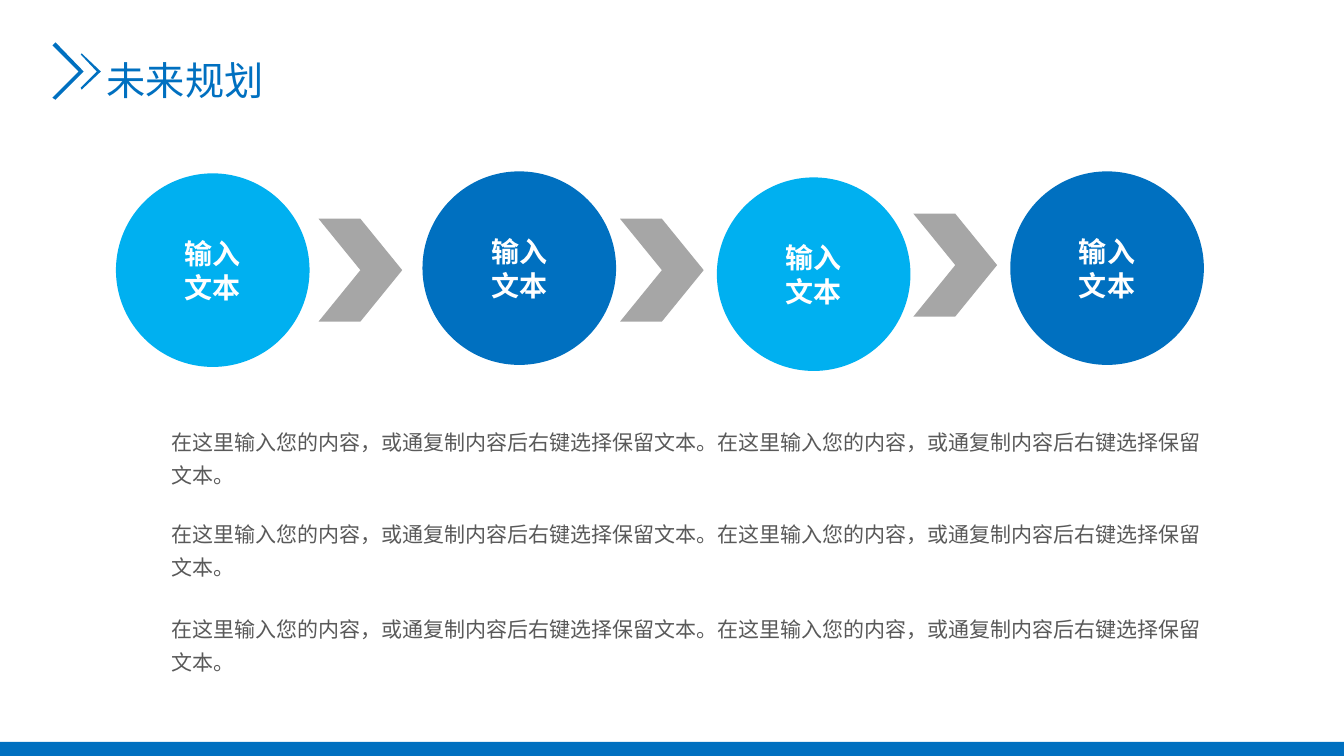
import pptx
import pptx.util
import pptx.dml.color
import pptx.enum.shapes
import pptx.enum.text
import pptx.oxml
import pptx.oxml.ns

Inches = pptx.util.Inches
MSO_SHAPE = pptx.enum.shapes.MSO_SHAPE
PP_ALIGN = pptx.enum.text.PP_ALIGN
MSO_ANCHOR = pptx.enum.text.MSO_ANCHOR
MSO_AUTO_SIZE = pptx.enum.text.MSO_AUTO_SIZE

FONT = "Noto Sans CJK SC"
BLUE, SKY, GREY, TEXT_GREY, WHITE = "0070C0", "00B0F0", "A6A6A6", "595959", "FFFFFF"
DIAMETER = 1.92
STEPS = [(1.15, 1.72, SKY), (4.19, 1.7, BLUE), (7.11, 1.76, SKY), (10.02, 1.7, BLUE)]
ARROWS = [(3.16, 2.17), (6.15, 2.17), (9.06, 2.12)]
BODY_TOPS = [4.14, 5.05, 5.99]
BODY = "在这里输入您的内容，或通复制内容后右键选择保留文本。" * 2
THIN_MARK = [(0.81, 0.53), (1, 0.71), (0.81, 0.89), (0.8, 0.87), (0.96, 0.71), (0.8, 0.54)]
THICK_MARK = [(0.55, 0.42), (0.83, 0.71), (0.55, 0.99), (0.52, 0.97), (0.78, 0.71), (0.52, 0.45)]


def rgb(value):
    return pptx.dml.color.RGBColor.from_string(value)


def place(sp, x, y, w, h):
    sp.left, sp.top, sp.width, sp.height = map(Inches, (x, y, w, h))


def paint(sp, color):
    sp.fill.solid()
    sp.fill.fore_color.rgb = rgb(color)
    sp.line.fill.background()
    sp.shadow.inherit = False


def write(tf, text, size=15, color=TEXT_GREY, bold=False, align=PP_ALIGN.LEFT,
          spacing=1.0, anchor=MSO_ANCHOR.TOP, wrap=True, grow=False):
    tf.word_wrap = wrap
    tf.vertical_anchor = anchor
    tf.auto_size = MSO_AUTO_SIZE.SHAPE_TO_FIT_TEXT if grow else MSO_AUTO_SIZE.NONE
    for i, line in enumerate(text.split("\n")):
        p = tf.add_paragraph() if i else tf.paragraphs[0]
        p.alignment = align
        p.line_spacing = spacing
        r = p.add_run()
        r.text = line
        r.font.name = FONT
        r.font.size = pptx.util.Pt(size)
        r.font.bold = bold
        r.font.color.rgb = rgb(color)
        # East Asian characters take their own typeface element
        ea = pptx.oxml.parse_xml(
            f'<a:ea {pptx.oxml.ns.nsdecls("a")} typeface="{FONT}"/>')
        r.font._element.append(ea)


def add_shape(s, kind, x, y, w, h, color):
    sp = s.shapes.add_shape(kind, *map(Inches, (x, y, w, h)))
    paint(sp, color)
    return sp


def add_outline(s, contours, color):
    first, *others = [[(Inches(x), Inches(y)) for x, y in c] for c in contours]
    builder = s.shapes.build_freeform(*first[0])
    builder.add_line_segments(first[1:], close=True)
    for points in others:
        builder.move_to(*points[0])
        builder.add_line_segments(points[1:], close=True)
    paint(builder.convert_to_shape(), color)


def add_step(s, x, y, color):
    sp = add_shape(s, MSO_SHAPE.OVAL, x, y, DIAMETER, DIAMETER, color)
    write(sp.text_frame, "输入\n文本", size=20, color=WHITE, bold=True,
          align=PP_ALIGN.CENTER, anchor=MSO_ANCHOR.MIDDLE)


def add_body(s, y):
    sp = s.shapes.add_textbox(*map(Inches, (1.6, y, 10.5, 0.76)))
    write(sp.text_frame, BODY, spacing=1.3, grow=True)


def main():
    prs = pptx.Presentation()
    prs.slide_width, prs.slide_height = Inches(13.33), Inches(7.5)
    s = prs.slides.add_slide(prs.slide_layouts[5])

    # Title with its double arrow mark, and the bottom band
    add_outline(s, [THIN_MARK, THICK_MARK], BLUE)
    add_shape(s, MSO_SHAPE.RECTANGLE, 0, 7.36, 13.33, 0.14, BLUE)
    title = s.shapes.title
    place(title, 0.96, 0.28, 1.77, 0.72)
    write(title.text_frame, "未来规划", size=28, color=BLUE, spacing=1.5,
          wrap=False, grow=True)

    # Process row
    for x, y in ARROWS:
        add_shape(s, MSO_SHAPE.CHEVRON, x, y, 0.83, 1.02, GREY)
    for x, y, color in STEPS:
        add_step(s, x, y, color)

    # Explanations
    for y in BODY_TOPS:
        add_body(s, y)

    prs.save("out.pptx")


if __name__ == "__main__":
    main()
